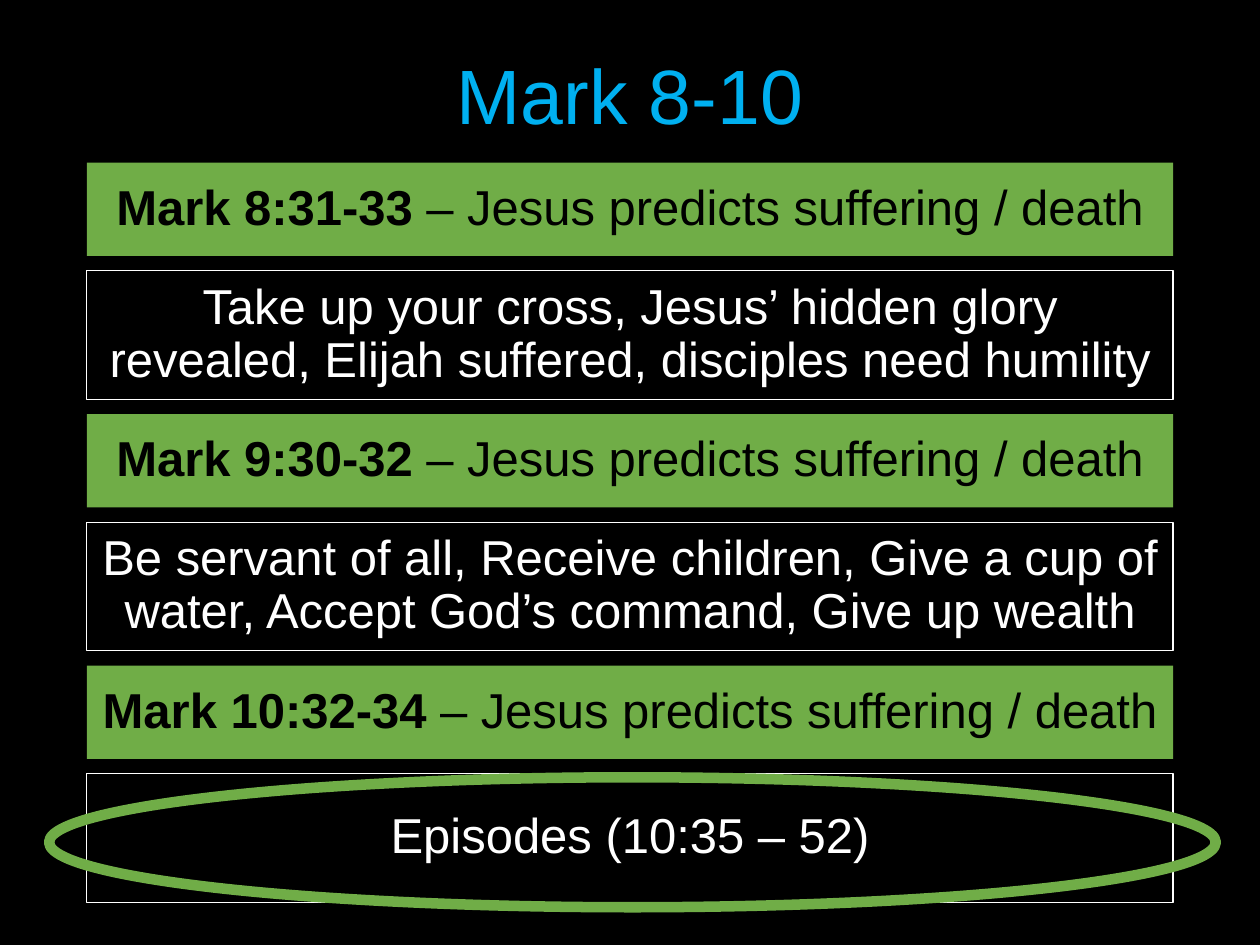
from pptx import Presentation
from pptx.dml.color import RGBColor
from pptx.enum.shapes import MSO_SHAPE as Preset
from pptx.enum.text import MSO_ANCHOR as Anchor, PP_ALIGN as Align
from pptx.util import Cm, Pt

BLACK, WHITE, GREEN, BLUE = "000000", "FFFFFF", "70AD47", "00B0F0"
LEFT, WIDTH = 1.75, 21.9
FIRST_TOP, PITCH = 3.28, 5.07
HEADING_HEIGHT, DETAIL_HEIGHT, DETAIL_OFFSET = 1.88, 2.59, 2.18

SECTIONS = [
    ("Mark 8:31-33 ",
     "Take up your cross, Jesus’ hidden glory revealed, "
     "Elijah suffered, disciples need humility"),
    ("Mark 9:30-32 ",
     "Be servant of all, Receive children, Give a cup of water, "
     "Accept God’s command, Give up wealth"),
    ("Mark 10:32-34 ", "Episodes (10:35 – 52)"),
]


def add_panel(preset, left, top, width, height, fill=None, line=None, line_width=0.75):
    """Add a flat shape placed in centimetres; no colour means no fill or line."""
    shape = slide.shapes.add_shape(preset, Cm(left), Cm(top), Cm(width), Cm(height))
    shape.shadow.inherit = False
    if fill:
        shape.fill.solid()
        shape.fill.fore_color.rgb = RGBColor.from_string(fill)
    else:
        shape.fill.background()
    if line:
        shape.line.color.rgb = RGBColor.from_string(line)
        shape.line.width = Pt(line_width)
    else:
        shape.line.fill.background()
    return shape


def write(shape, text, color, size=28, bold_lead=""):
    """Centre the text in the shape, after an optional bold lead."""
    frame = shape.text_frame
    frame.word_wrap = True
    frame.vertical_anchor = Anchor.MIDDLE
    paragraph = frame.paragraphs[0]
    paragraph.text = bold_lead or text
    if bold_lead:
        paragraph.add_run().text = text
        paragraph.runs[0].font.bold = True
    paragraph.alignment = Align.CENTER
    paragraph.line_spacing = 0.9
    for run in paragraph.runs:
        run.font.name = "Arial"
        run.font.size = Pt(size)
        run.font.color.rgb = RGBColor.from_string(color)


presentation = Presentation()
presentation.slide_width, presentation.slide_height = Cm(25.4), Cm(19.05)
slide = presentation.slides.add_slide(presentation.slide_layouts[6])
slide.background.fill.solid()
slide.background.fill.fore_color.rgb = RGBColor.from_string(BLACK)

title = slide.shapes.add_textbox(Cm(LEFT), Cm(1.02), Cm(WIDTH), Cm(1.96))
write(title, "Mark 8-10", BLUE, size=44)

for index, (passage, detail) in enumerate(SECTIONS):
    top = FIRST_TOP + index * PITCH
    heading = add_panel(Preset.RECTANGLE, LEFT, top, WIDTH, HEADING_HEIGHT, fill=GREEN)
    write(heading, "– Jesus predicts suffering / death", BLACK, bold_lead=passage)
    box = add_panel(Preset.RECTANGLE, LEFT, top + DETAIL_OFFSET, WIDTH, DETAIL_HEIGHT,
                    line=WHITE)
    write(box, detail, WHITE)

add_panel(Preset.OVAL, 0.99, 15.67, 23.52, 2.62, line=GREEN, line_width=6)

presentation.save("out.pptx")
